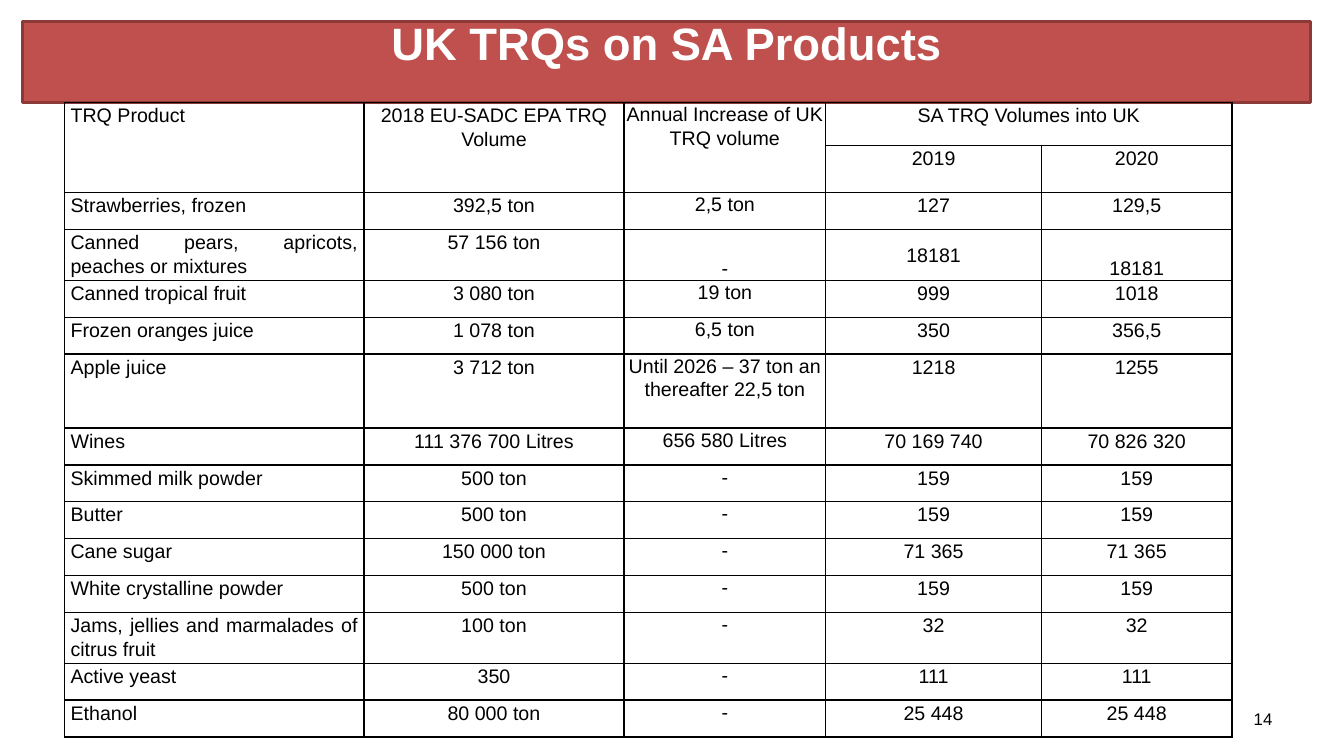
from dataclasses import dataclass
from typing import Any

from lxml.etree import SubElement
from pptx import Presentation
from pptx.dml.color import RGBColor
from pptx.enum.text import MSO_ANCHOR, MSO_AUTO_SIZE, PP_ALIGN
from pptx.oxml.ns import qn
from pptx.util import Inches, Pt


@dataclass(frozen=True)
class Theme:
    font: str = "Arial"
    red: str = "C0504D"
    edge: str = "8C3A38"
    ink: str = "000000"
    paper: str = "FFFFFF"
    head: float = 32.4
    body: float = 14
    small: float = 12


STEP = 1.1 / 3


@dataclass(frozen=True)
class Quota:
    name: str
    volume: str
    growth: str
    first: str
    second: str
    height: float = STEP

    def texts(self) -> list[str]:
        return [self.name, self.volume, self.growth, self.first, self.second]


THEME = Theme()
WIDTHS = [2.97, 2.58, 2, 2.14, 1.89]
MERGES = [(0, 0, 1, 0), (0, 1, 1, 1), (0, 2, 1, 2), (0, 3, 0, 4)]
PEARS = 3
ANCHORS = {
    (PEARS, 2): MSO_ANCHOR.BOTTOM,
    (PEARS, 3): MSO_ANCHOR.MIDDLE,
    (PEARS, 4): MSO_ANCHOR.BOTTOM,
}
QUOTAS = [
    Quota("TRQ Product", "2018 EU-SADC EPA TRQ Volume",
          "Annual Increase of UK TRQ volume", "SA TRQ Volumes into UK", "", 0.42),
    Quota("", "", "", "2019", "2020", 0.26),
    Quota("Strawberries, frozen", "392,5 ton", "2,5 ton", "127", "129,5"),
    Quota("Canned pears, apricots, peaches or mixtures", "57 156 ton", "-",
          "18181", "18181", 0.5),
    Quota("Canned tropical fruit", "3 080 ton", "19 ton", "999", "1018"),
    Quota("Frozen oranges juice", "1 078 ton", "6,5 ton", "350", "356,5"),
    Quota("Apple juice", "3 712 ton", "Until 2026 – 37 ton an thereafter 22,5 ton",
          "1218", "1255", 2 * STEP),
    Quota("Wines", "111 376 700 Litres", "656 580 Litres", "70 169 740", "70 826 320"),
    Quota("Skimmed milk powder", "500 ton", "-", "159", "159"),
    Quota("Butter", "500 ton", "-", "159", "159"),
    Quota("Cane sugar", "150 000 ton", "-", "71 365", "71 365"),
    Quota("White crystalline powder", "500 ton", "-", "159", "159"),
    Quota("Jams, jellies and marmalades of citrus fruit", "100 ton", "-", "32", "32", 0.5),
    Quota("Active yeast", "350", "-", "111", "111"),
    Quota("Ethanol", "80 000 ton", "-", "25 448", "25 448"),
]


def apply(target: Any, values: dict[str, Any]) -> None:
    for name, value in values.items():
        setattr(target, name, value)


def margins(left: float, top: float, right: float, bottom: float) -> dict[str, Any]:
    return {
        "margin_left": Inches(left), "margin_top": Inches(top),
        "margin_right": Inches(right), "margin_bottom": Inches(bottom),
    }


def write(frame: Any, text: str, size: float, color: str, align: Any,
          bold: bool = False, spacing: float = 1.0) -> None:
    line = frame.paragraphs[0]
    apply(line, {"alignment": align, "line_spacing": spacing})
    run = line.add_run()
    run.text = text
    apply(run.font, {"name": THEME.font, "size": Pt(size), "bold": bold})
    run.font.color.rgb = RGBColor.from_string(color)


def border(cell: Any) -> None:
    props = cell._tc.get_or_add_tcPr()
    for side in ("lnL", "lnR", "lnT", "lnB"):
        line = SubElement(props, qn(f"a:{side}"), w=str(Pt(1)))
        fill = SubElement(line, qn("a:solidFill"))
        SubElement(fill, qn("a:srgbClr"), val=THEME.ink)


def add_title(slide: Any) -> None:
    title = slide.shapes.title
    apply(title, {"left": Inches(0.22), "top": Inches(0.21),
                  "width": Inches(12.78), "height": Inches(0.81)})
    title.fill.solid()
    title.fill.fore_color.rgb = RGBColor.from_string(THEME.red)
    title.line.color.rgb = RGBColor.from_string(THEME.edge)
    title.line.width = Pt(2)
    frame = title.text_frame
    apply(frame, {"auto_size": MSO_AUTO_SIZE.NONE, "word_wrap": True,
                  "vertical_anchor": MSO_ANCHOR.TOP, **margins(0.05, 0, 0.05, 0.05)})
    write(frame, "UK TRQs on SA Products", THEME.head, THEME.paper,
          PP_ALIGN.CENTER, bold=True, spacing=0.9)


def add_quotas(slide: Any) -> None:
    total = sum(quota.height for quota in QUOTAS)
    table = slide.shapes.add_table(
        len(QUOTAS), len(WIDTHS), Inches(0.64), Inches(1.02),
        Inches(sum(WIDTHS)), Inches(total)).table
    apply(table, {"first_row": False, "horz_banding": False})
    for column, width in zip(table.columns, WIDTHS):
        column.width = Inches(width)
    for top, left, bottom, right in MERGES:
        table.cell(top, left).merge(table.cell(bottom, right))
    for row, quota in enumerate(QUOTAS):
        table.rows[row].height = Inches(quota.height)
        for col, text in enumerate(quota.texts()):
            cell = table.cell(row, col)
            inset = margins(0, 0, 0, 0) if col == 2 else margins(0.06, 0.01, 0.06, 0)
            anchor = ANCHORS.get((row, col), MSO_ANCHOR.TOP)
            apply(cell, {"vertical_anchor": anchor, **inset})
            border(cell)
            cell.fill.background()
            if text:
                align = PP_ALIGN.JUSTIFY if col == 0 else PP_ALIGN.CENTER
                write(cell.text_frame, text, THEME.body, THEME.ink, align, spacing=1.06)


def add_number(slide: Any) -> None:
    box = slide.shapes.add_textbox(Inches(12.27), Inches(6.98), Inches(0.4), Inches(0.3))
    frame = box.text_frame
    apply(frame, {"word_wrap": True, "auto_size": MSO_AUTO_SIZE.NONE,
                  "vertical_anchor": MSO_ANCHOR.MIDDLE, **margins(0.05, 0.05, 0.05, 0.05)})
    write(frame, "14", THEME.small, THEME.ink, PP_ALIGN.RIGHT)


def main() -> None:
    deck = Presentation()
    apply(deck, {"slide_width": Inches(13.33), "slide_height": Inches(7.5)})
    slide = deck.slides.add_slide(deck.slide_layouts[5])
    add_title(slide)
    add_number(slide)
    add_quotas(slide)
    deck.save("out.pptx")


if __name__ == "__main__":
    main()
